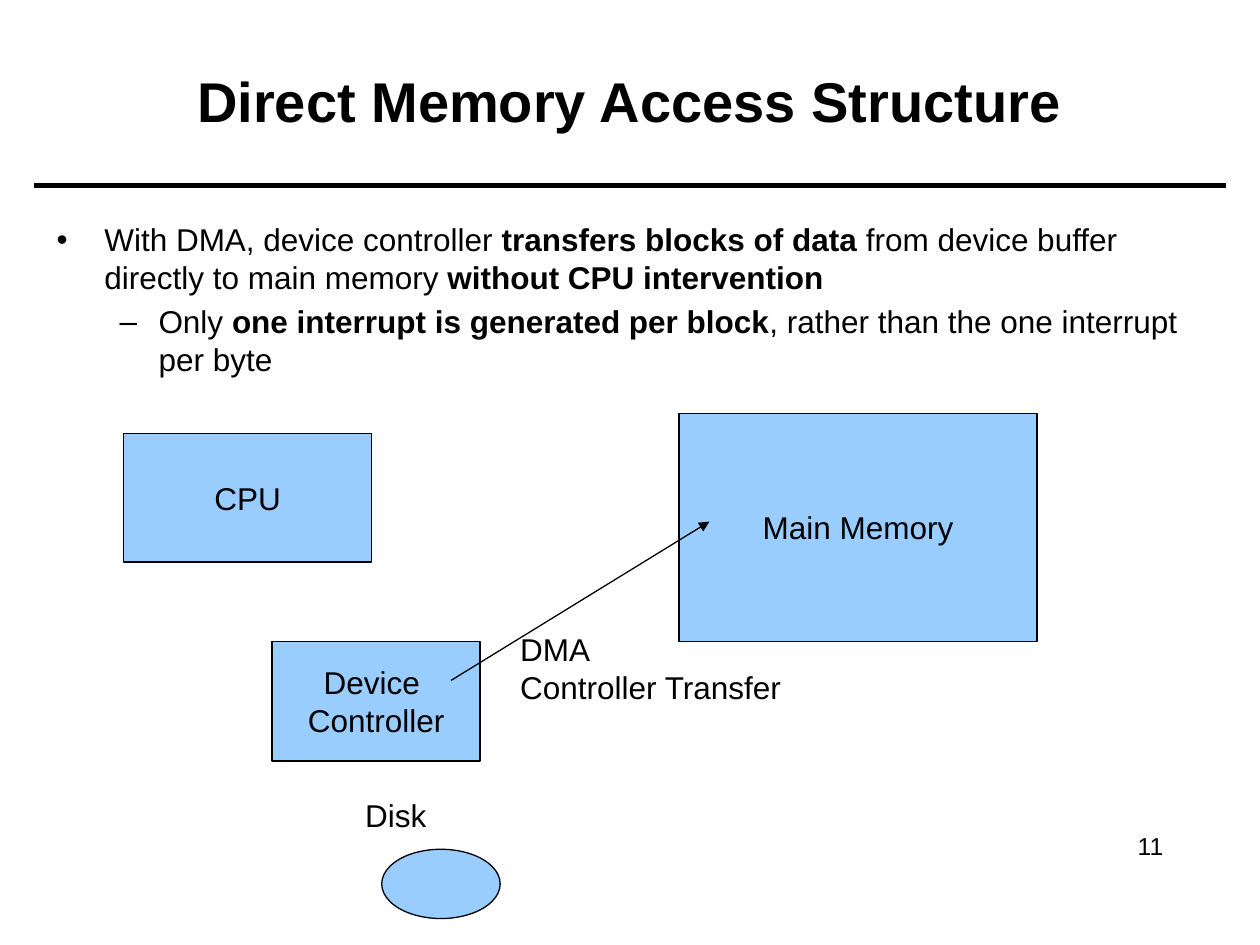
from lxml import etree
from pptx import Presentation
from pptx.dml.color import RGBColor
from pptx.enum.shapes import MSO_CONNECTOR, MSO_SHAPE
from pptx.enum.text import MSO_ANCHOR, MSO_AUTO_SIZE, PP_ALIGN
from pptx.oxml.ns import qn
from pptx.util import Inches, Pt

BLACK = RGBColor(0x00, 0x00, 0x00)
LIGHT_BLUE = RGBColor(0x99, 0xCC, 0xFF)
LEFT, CENTER, RIGHT = PP_ALIGN.LEFT, PP_ALIGN.CENTER, PP_ALIGN.RIGHT
STRAIGHT = MSO_CONNECTOR.STRAIGHT
MIDDLE = MSO_ANCHOR.MIDDLE
NO_AUTOFIT = MSO_AUTO_SIZE.NONE
RECTANGLE, OVAL = MSO_SHAPE.RECTANGLE, MSO_SHAPE.OVAL


def format_text(text_frame, size=18, alignment=LEFT):
    for paragraph in text_frame.paragraphs:
        paragraph.alignment = alignment
        for run in paragraph.runs:
            run.font.name = "Arial"
            run.font.size = Pt(size)
            run.font.color.rgb = BLACK


def add_line(start, end, width):
    """Add a black straight line between two (x, y) points in inches."""
    points = [Inches(value) for value in (*start, *end)]
    line = slide.shapes.add_connector(STRAIGHT, *points)
    line.line.color.rgb = BLACK
    line.line.width = Pt(width)
    etree.SubElement(line._element.spPr, qn("a:effectLst"))
    return line


presentation = Presentation()
presentation.slide_width = Inches(10)
presentation.slide_height = Inches(7.5)
slide = presentation.slides.add_slide(presentation.slide_layouts[5])

# Title and rule
title = slide.shapes.title
title.left, title.top = Inches(0.35), Inches(0.17)
title.width, title.height = Inches(9.29), Inches(1.25)
title.text_frame.text = "Direct Memory Access Structure"
title.text_frame.vertical_anchor = MIDDLE
title.text_frame.auto_size = NO_AUTOFIT
format_text(title.text_frame, 32, CENTER)
title.text_frame.paragraphs[0].runs[0].font.bold = True
add_line((0.27, 1.47), (9.73, 1.47), 3)

# Bullets: level, bullet, left margin, hanging indent, (text, bold) runs
bullets = [
    (0, "•", 0.38, 0.38, [
        ("With DMA, device controller ", False),
        ("transfers blocks of data", True),
        (" from device buffer directly to main memory ", False),
        ("without CPU intervention", True),
    ]),
    (1, "–", 0.81, 0.31, [
        ("Only ", False),
        ("one interrupt is generated per block", True),
        (", rather than the one interrupt per byte", False),
    ]),
]
body = slide.shapes.add_textbox(Inches(0.35), Inches(1.7), Inches(9.29), Inches(5.12))
body.text_frame.word_wrap = True
for level, bullet, margin, hanging, runs in bullets:
    paragraph = body.text_frame.paragraphs[0] if level == 0 else body.text_frame.add_paragraph()
    paragraph.level = level
    paragraph.space_before = Pt(3.6)
    properties = paragraph._p.get_or_add_pPr()
    properties.set("marL", str(Inches(margin)))
    properties.set("indent", str(-Inches(hanging)))
    etree.SubElement(properties, qn("a:buFont"), typeface="Arial")
    etree.SubElement(properties, qn("a:buChar"), char=bullet)
    for text, bold in runs:
        run = paragraph.add_run()
        run.text = text
        run.font.bold = bold
format_text(body.text_frame)

# Diagram blocks
blocks = [
    (OVAL, "", 3.03, 6.74, 0.94, 0.55),
    (RECTANGLE, "Device \vController", 2.16, 5.09, 1.65, 0.95),
    (RECTANGLE, "Main Memory", 5.39, 3.28, 2.84, 1.81),
    (RECTANGLE, "CPU", 0.98, 3.44, 1.97, 1.02),
]
for kind, text, *box in blocks:
    block = slide.shapes.add_shape(kind, *[Inches(value) for value in box])
    block.shadow.inherit = False
    block.fill.solid()
    block.fill.fore_color.rgb = LIGHT_BLUE
    block.line.color.rgb = BLACK
    block.line.width = Pt(0.75)
    if text:
        block.text_frame.text = text
        block.text_frame.word_wrap = False
        block.text_frame.vertical_anchor = MIDDLE
        format_text(block.text_frame, alignment=CENTER)

# DMA transfer arrow
arrow = add_line((3.58, 5.4), (5.63, 4.14), 0.75)
etree.SubElement(arrow.line._get_or_add_ln(), qn("a:tailEnd"), type="triangle")

# Labels and slide number
labels = [
    ("DMA\nController Transfer", 18, LEFT, 4.03, 4.95, 2.28, 0.7),
    ("Disk", 18, LEFT, 2.8, 6.27, 0.69, 0.4),
    ("11", 14, RIGHT, 8.29, 6.55, 1.04, 0.34),
]
for text, size, alignment, *box in labels:
    label = slide.shapes.add_textbox(*[Inches(value) for value in box])
    label.text_frame.text = text
    label.text_frame.word_wrap = alignment == RIGHT
    format_text(label.text_frame, size, alignment)

presentation.save("out.pptx")
